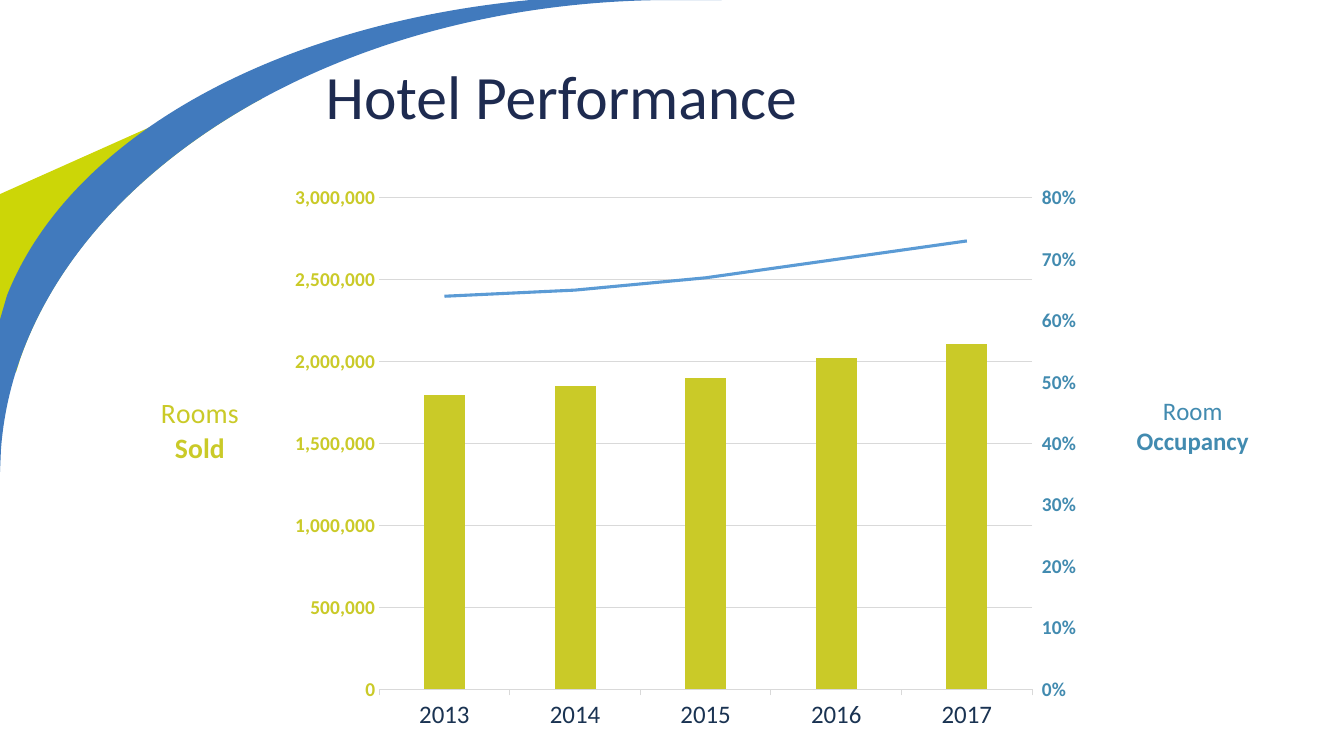
from copy import deepcopy

from pptx import Presentation
from pptx.chart.axis import CategoryAxis, ValueAxis
from pptx.chart.data import CategoryChartData
from pptx.dml.color import RGBColor
from pptx.enum.chart import XL_CHART_TYPE, XL_MARKER_STYLE, XL_TICK_MARK
from pptx.enum.text import MSO_ANCHOR, PP_ALIGN
from pptx.oxml import parse_xml
from pptx.oxml.ns import nsdecls
from pptx.util import Pt

COLUMNS = XL_CHART_TYPE.COLUMN_CLUSTERED
NO_MARKER = XL_MARKER_STYLE.NONE
TICK_NONE, TICK_OUT = XL_TICK_MARK.NONE, XL_TICK_MARK.OUTSIDE
MIDDLE = MSO_ANCHOR.MIDDLE
LEFT, CENTER = PP_ALIGN.LEFT, PP_ALIGN.CENTER
TITLE_ONLY = 5

# A pair is a corner; six numbers are a Bezier curve from the previous point.
GREEN_WEDGE = [
    (181.44, 57.6), (187.2, 70.56), (182.88, 72.72),
    (100.8, 118.8, 40.32, 182.16, 14.4, 256.32),
    (11.52, 265.68), (-0.72, 239.04), (-0.72, 138.96),
]
BLUE_ARC = [
    (505.44, -0.72), (509.76, -0.72), (515.52, 0), (480.24, 0),
    (223.2, 0, 13.68, 142.56, 0.72, 321.12),
    (0, 337.68), (0, 341.28), (-0.72, 339.84), (0, 228.24), (5.04, 210.96),
    (49.68, 98.64, 195.84, 17.28, 378.72, 0),
    (395.28, -0.72),
]
YEARS = ["2013", "2014", "2015", "2016", "2017"]
ROOMS_SOLD = [1800000, 1850000, 1900000, 2020000, 2110000]
OCCUPANCY = [0.64, 0.65, 0.67, 0.7, 0.73]


def color(hex_text):
    return RGBColor.from_string(hex_text)


def set_layout(parent, index, x, y, size=None):
    """Give a chart part a fixed place, in fractions of the chart."""
    for old_layout in parent.xpath("c:layout"):
        parent.remove(old_layout)
    values = [("xMode", "edge"), ("yMode", "edge"), ("x", x), ("y", y)]
    if size:
        values = [("layoutTarget", "inner")] + values + [("w", size[0]), ("h", size[1])]
    inner = "".join(f'<c:{name} val="{value}"/>' for name, value in values)
    parent.insert(index, parse_xml(
        f'<c:layout {nsdecls("c")}><c:manualLayout>{inner}</c:manualLayout></c:layout>'))


class HotelDeck:
    font_name = "Calibri"
    navy, ink = "1E2B50", "1A3352"
    lime, teal, sky = "CACA28", "428BB0", "5B9BD5"
    grid = "D9D9D9"

    def __init__(self):
        self.deck = Presentation()
        self.deck.slide_width, self.deck.slide_height = Pt(960), Pt(540)
        self.page = self.deck.slides.add_slide(self.deck.slide_layouts[TITLE_ONLY])

    def style_font(self, font, size, hex_text, bold=False):
        font.name, font.size, font.bold = self.font_name, Pt(size), bold
        font.color.rgb = color(hex_text)

    def add_outline(self, steps, fill):
        """Draw a closed outline, joining each curve's three points into one Bezier."""
        points = [(step[i] * 100, step[i + 1] * 100)
                  for step in steps for i in range(0, len(step), 2)]
        builder = self.page.shapes.build_freeform(*points[0], scale=Pt(1) / 100)
        builder.add_line_segments(points[1:], close=True)
        shape = builder.convert_to_shape()
        segments = iter(shape._element.xpath(".//a:lnTo"))
        for step in steps[1:]:
            segment = next(segments)
            if len(step) == 6:
                curve = parse_xml(f'<a:cubicBezTo {nsdecls("a")}/>')
                segment.addprevious(curve)
                for part in (segment, next(segments), next(segments)):
                    curve.append(part[0])
                    part.getparent().remove(part)
        shape.shadow.inherit = False
        shape.fill.solid()
        shape.fill.fore_color.rgb = color(fill)
        shape.line.fill.background()

    def set_title(self, text, left, top, width, height):
        title = self.page.shapes.title
        self.page.shapes.element.append(title.element)  # in front of the curves
        title.left, title.top = Pt(left), Pt(top)
        title.width, title.height = Pt(width), Pt(height)
        title.text_frame.vertical_anchor = MIDDLE
        title.text_frame.word_wrap = True
        para = title.text_frame.paragraphs[0]
        para.alignment, para.line_spacing = LEFT, 0.9
        span = para.add_run()
        span.text = text
        self.style_font(span.font, 44, self.navy)

    def style_value_axis(self, axis, maximum, step, number_format, hex_text, tick):
        axis.minimum_scale, axis.maximum_scale, axis.major_unit = 0, maximum, step
        axis.major_tick_mark, axis.minor_tick_mark = tick, TICK_NONE
        axis.tick_labels.number_format = number_format
        axis.tick_labels.number_format_is_linked = False
        self.style_font(axis.tick_labels.font, 14, hex_text, bold=True)
        axis.format.line.fill.background()

    def add_axis_title(self, axis, words, size, hex_text, x, y):
        """Write a level two-line axis title whose second line is bold."""
        title = axis.axis_title
        frame = title.text_frame
        for number, word in enumerate(words):
            para = frame.add_paragraph() if number else frame.paragraphs[0]
            para.alignment = CENTER
            span = para.add_run()
            span.text = word
            self.style_font(span.font, size, hex_text, bold=number == 1)
        body = title._element.xpath(".//a:bodyPr")[0]
        body.set("rot", "0")
        body.set("vert", "horz")
        set_layout(title._element, 1, x, y)

    def split_value_axes(self, chart):
        """Make the second series a line on its own axis; return left and right axes."""
        area = chart._chartSpace.xpath(".//c:plotArea")[0]
        bars = area.xpath("c:barChart")[0]
        series = bars.xpath("c:ser")[1]
        for flag in series.xpath("c:invertIfNegative"):
            series.remove(flag)
        line_plot = parse_xml(
            f'<c:lineChart {nsdecls("c")}><c:grouping val="standard"/>'
            '<c:varyColors val="0"/><c:marker val="1"/>'
            '<c:axId val="50010"/><c:axId val="50020"/></c:lineChart>')
        line_plot.insert(2, series)
        bars.addnext(line_plot)

        left_values = area.xpath("c:valAx")[0]
        years, values = deepcopy(area.xpath("c:catAx")[0]), deepcopy(left_values)
        for axis, own, crossed in ((years, "50010", "50020"), (values, "50020", "50010")):
            axis.xpath("c:axId")[0].set("val", own)
            axis.xpath("c:crossAx")[0].set("val", crossed)
        values.xpath("c:axPos")[0].set("val", "r")
        values.xpath("c:crosses")[0].set("val", "max")
        left_values.addnext(values)
        values.addnext(years)
        CategoryAxis(years).visible = False
        right_axis = ValueAxis(values)
        right_axis.has_major_gridlines = False
        set_layout(area, 0, 0.212, 0.028, (0.599, 0.885))
        return ValueAxis(left_values), right_axis

    def add_performance_chart(self, left, top, width, height):
        data = CategoryChartData()
        data.categories = YEARS
        data.add_series("Rooms Sold", ROOMS_SOLD, "#,##0")
        data.add_series("Room Occupancy", OCCUPANCY, "0%")
        chart = self.page.shapes.add_chart(
            COLUMNS, Pt(left), Pt(top), Pt(width), Pt(height), data).chart
        chart.has_legend = chart.has_title = False
        self.style_font(chart.font, 14, self.ink)
        rooms, percent = self.split_value_axes(chart)

        columns, line = chart.plots
        columns.gap_width = 219
        columns.vary_by_categories = False
        fill = columns.series[0].format.fill
        fill.solid()
        fill.fore_color.rgb = color(self.lime)
        occupancy = line.series[0]
        occupancy.smooth = False
        occupancy.marker.style = NO_MARKER
        occupancy.format.line.width = Pt(2.25)
        occupancy.format.line.color.rgb = color(self.sky)

        years = chart.category_axis
        years.major_tick_mark = TICK_OUT
        self.style_font(years.tick_labels.font, 18, self.ink)
        for part in (years, rooms.major_gridlines):
            part.format.line.width = Pt(0.75)
            part.format.line.color.rgb = color(self.grid)
        self.style_value_axis(rooms, 3000000, 500000, "#,##0", self.lime, TICK_NONE)
        self.style_value_axis(percent, 0.8, 0.1, "0%", self.teal, TICK_OUT)
        self.add_axis_title(rooms, ("Rooms", "Sold"), 20, self.lime, 0.009, 0.376)
        self.add_axis_title(percent, ("Room", "Occupancy"), 18, self.teal, 0.904, 0.376)


def main():
    hotel = HotelDeck()
    hotel.add_outline(GREEN_WEDGE, "CCD607")
    hotel.add_outline(BLUE_ARC, "417ABD")
    hotel.set_title("Hotel Performance", 225.4, 23.8, 668, 94.3)
    hotel.add_performance_chart(105.8, 130.3, 788.4, 396.7)
    hotel.deck.save("out.pptx")


if __name__ == "__main__":
    main()
